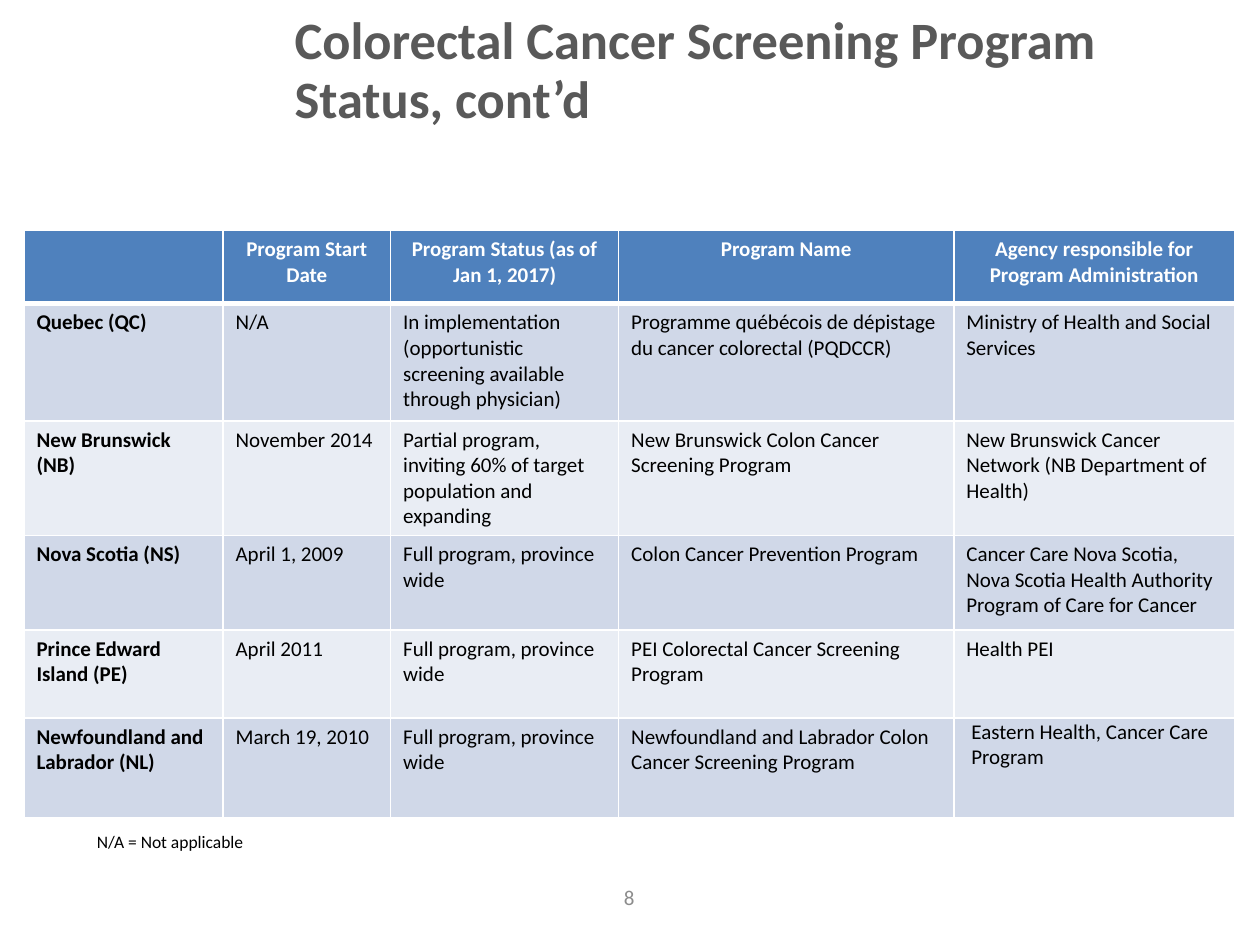
from lxml.etree import SubElement
from pptx import Presentation
from pptx.dml.color import RGBColor
from pptx.enum.text import MSO_ANCHOR, PP_ALIGN
from pptx.oxml.ns import qn
from pptx.util import Inches, Pt

WHITE = RGBColor(0xFF, 0xFF, 0xFF)
BLACK = RGBColor(0x00, 0x00, 0x00)
TITLE_GRAY = RGBColor(0x59, 0x59, 0x59)
NUMBER_GRAY = RGBColor(0x8C, 0x8C, 0x8C)
HEADER_BLUE = RGBColor(0x4F, 0x81, 0xBD)
BAND_COLORS = (RGBColor(0xD0, 0xD8, 0xE8), RGBColor(0xE9, 0xED, 0xF4))

SLIDE_WIDTH, SLIDE_HEIGHT = Inches(10), Inches(7.5)
COLUMN_WIDTHS = (1.58, 1.33, 1.81, 2.66, 2.23)
ROW_HEIGHTS = (0.58, 0.93, 0.91, 0.75, 0.7, 0.79)

PROGRAMS = (
    ("", "Program Start Date", "Program Status (as of Jan 1, 2017)", "Program Name",
     "Agency responsible for Program Administration"),
    ("Quebec (QC)", "N/A",
     "In implementation (opportunistic screening available through physician)",
     "Programme québécois de dépistage du cancer colorectal (PQDCCR)",
     "Ministry of Health and Social Services"),
    ("New Brunswick (NB)", "November 2014",
     "Partial program, inviting 60% of target population and expanding",
     "New Brunswick Colon Cancer Screening Program",
     "New Brunswick Cancer Network (NB Department of Health)"),
    ("Nova Scotia (NS)", "April 1, 2009", "Full program, province wide",
     "Colon Cancer Prevention Program",
     "Cancer Care Nova Scotia, \nNova Scotia Health Authority \nProgram of Care for Cancer"),
    ("Prince Edward Island (PE)", "April 2011", "Full program, province wide",
     "PEI Colorectal Cancer Screening Program", "Health PEI"),
    ("Newfoundland and Labrador (NL)", "March 19, 2010", "Full program, province wide",
     "Newfoundland and Labrador Colon Cancer Screening Program",
     "Eastern Health, Cancer Care Program"),
)


def write_text(text_frame, text, size=12, color=BLACK, bold=False,
               align=PP_ALIGN.LEFT, line_spacing=None):
    paragraph = text_frame.paragraphs[0]
    paragraph.text = text
    paragraph.alignment = align
    paragraph.line_spacing = line_spacing
    for run in paragraph.runs:
        run.font.name = "Calibri"
        run.font.size = Pt(size)
        run.font.bold = bold
        run.font.color.rgb = color


def add_text_box(slide, left, top, width, height, text, anchor=MSO_ANCHOR.TOP, **text_format):
    shape = slide.shapes.add_textbox(
        int(SLIDE_WIDTH * left), int(SLIDE_HEIGHT * top),
        int(SLIDE_WIDTH * width), int(SLIDE_HEIGHT * height))
    shape.text_frame.word_wrap = True
    shape.text_frame.vertical_anchor = anchor
    write_text(shape.text_frame, text, **text_format)


def set_borders(cell, bottom_width):
    properties = cell._tc.get_or_add_tcPr()
    widths = {"a:lnL": 1, "a:lnR": 1, "a:lnT": 1, "a:lnB": bottom_width}
    for position, (tag, width) in enumerate(widths.items()):
        line = SubElement(properties, qn(tag), w=str(Pt(width)))
        fill = SubElement(line, qn("a:solidFill"))
        SubElement(fill, qn("a:srgbClr"), val=str(WHITE))
        properties.insert(position, line)


def format_cell(cell, text, row, column):
    is_header = row == 0
    cell.fill.solid()
    cell.fill.fore_color.rgb = HEADER_BLUE if is_header else BAND_COLORS[(row - 1) % 2]
    set_borders(cell, 3 if is_header else 1)
    write_text(cell.text_frame, text,
               color=WHITE if is_header else BLACK,
               bold=is_header or column == 0,
               align=PP_ALIGN.CENTER if is_header else PP_ALIGN.LEFT)


def add_program_table(slide):
    table = slide.shapes.add_table(
        len(ROW_HEIGHTS), len(COLUMN_WIDTHS), Inches(0.19), Inches(1.83),
        Inches(sum(COLUMN_WIDTHS)), Inches(sum(ROW_HEIGHTS))).table
    for column, width in zip(table.columns, COLUMN_WIDTHS):
        column.width = Inches(width)
    for row, height in zip(table.rows, ROW_HEIGHTS):
        row.height = Inches(height)
    for row, values in enumerate(PROGRAMS):
        for column, text in enumerate(values):
            format_cell(table.cell(row, column), text, row, column)
    last_cell = table.cell(len(ROW_HEIGHTS) - 1, len(COLUMN_WIDTHS) - 1)
    last_cell.margin_left = Inches(0.14)
    last_cell.margin_top = last_cell.margin_right = Inches(0.01)
    last_cell.margin_bottom = 0


def main():
    presentation = Presentation()
    presentation.slide_width, presentation.slide_height = SLIDE_WIDTH, SLIDE_HEIGHT
    slide = presentation.slides.add_slide(presentation.slide_layouts[6])
    add_text_box(slide, 0.224, 0.028, 0.726, 0.092,
                 "Colorectal Cancer Screening Program Status, cont’d",
                 anchor=MSO_ANCHOR.MIDDLE, size=30, color=TITLE_GRAY, bold=True,
                 line_spacing=Pt(34))
    add_program_table(slide)
    add_text_box(slide, 0.067, 0.873, 0.654, 0.036, "N/A = Not applicable", size=10)
    add_text_box(slide, 0.383, 0.923, 0.233, 0.053, "8", anchor=MSO_ANCHOR.MIDDLE,
                 color=NUMBER_GRAY, align=PP_ALIGN.CENTER)
    presentation.save("out.pptx")


if __name__ == "__main__":
    main()
